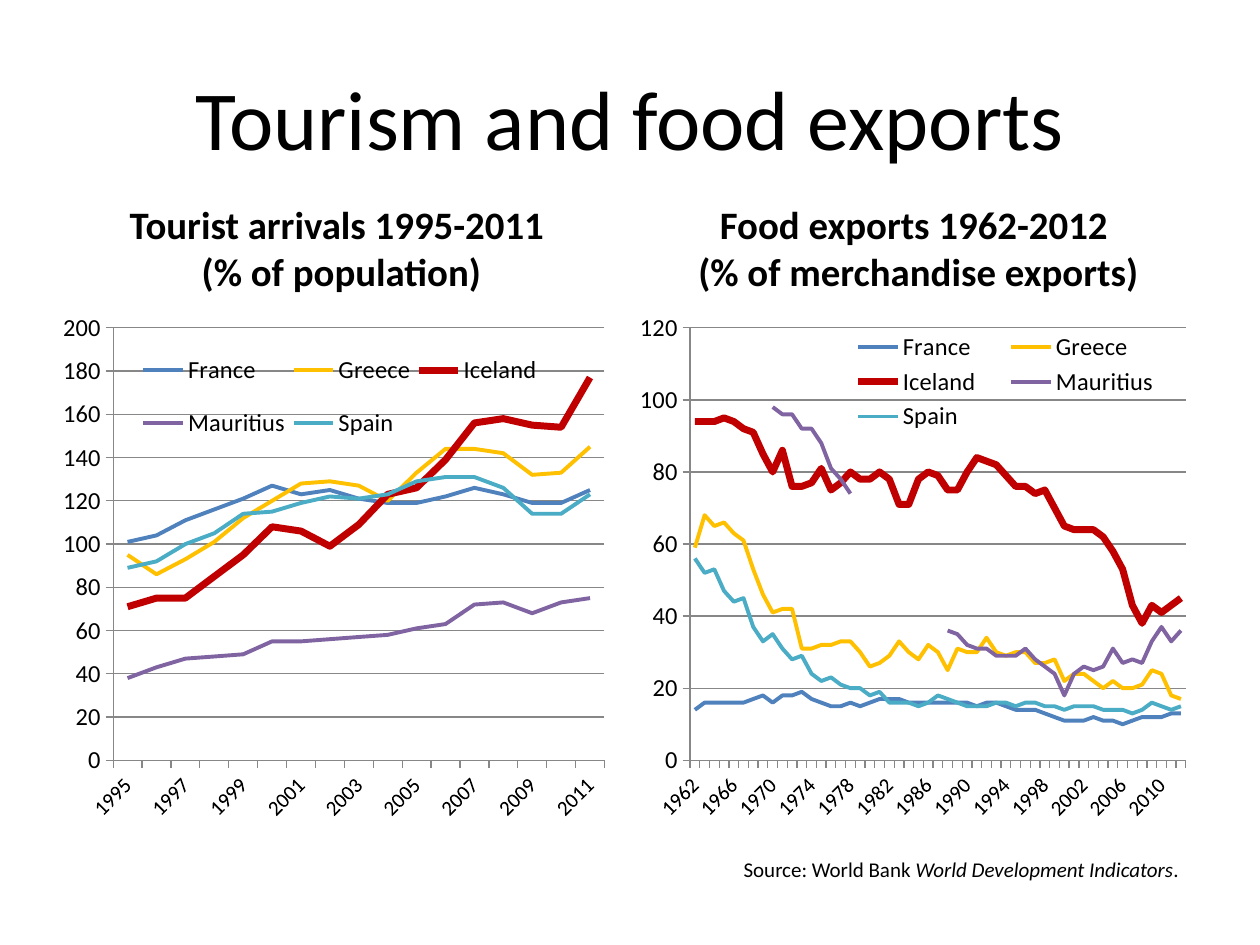
import pptx
import pptx.chart.data
import pptx.dml.color
import pptx.enum.chart
import pptx.enum.text
import pptx.oxml
import pptx.oxml.ns
import pptx.util
from pptx.util import Cm

FONT = "Calibri"
COLORS = {
    "text": "000000",
    "grid": "878787",
    "France": "4F81BD",
    "Greece": "FFC000",
    "Iceland": "C00000",
    "Mauritius": "8064A2",
    "Spain": "4BACC6",
}
HIGHLIGHT = "Iceland"

ARRIVALS = {
    "France": [101, 104, 111, 116, 121, 127, 123, 125, 121, 119, 119, 122, 126, 123, 119, 119, 125],
    "Greece": [95, 86, 93, 101, 112, 120, 128, 129, 127, 120, 133, 144, 144, 142, 132, 133, 145],
    "Iceland": [71, 75, 75, 85, 95, 108, 106, 99, 109, 123, 126, 139, 156, 158, 155, 154, 177],
    "Mauritius": [38, 43, 47, 48, 49, 55, 55, 56, 57, 58, 61, 63, 72, 73, 68, 73, 75],
    "Spain": [89, 92, 100, 105, 114, 115, 119, 122, 121, 123, 129, 131, 131, 126, 114, 114, 123],
}
FOOD_EXPORTS = {
    "France": [14, 16, 16, 16, 16, 16, 17, 18, 16, 18, 18, 19, 17, 16, 15, 15, 16,
               15, 16, 17, 17, 17, 16, 16, 16, 16, 16, 16, 16, 15, 16, 16, 15, 14,
               14, 14, 13, 12, 11, 11, 11, 12, 11, 11, 10, 11, 12, 12, 12, 13, 13],
    "Greece": [59, 68, 65, 66, 63, 61, 53, 46, 41, 42, 42, 31, 31, 32, 32, 33, 33,
               30, 26, 27, 29, 33, 30, 28, 32, 30, 25, 31, 30, 30, 34, 30, 29, 30,
               30, 27, 27, 28, 22, 24, 24, 22, 20, 22, 20, 20, 21, 25, 24, 18, 17],
    "Iceland": [94, 94, 94, 95, 94, 92, 91, 85, 80, 86, 76, 76, 77, 81, 75, 77, 80,
                78, 78, 80, 78, 71, 71, 78, 80, 79, 75, 75, 80, 84, 83, 82, 79, 76,
                76, 74, 75, 70, 65, 64, 64, 64, 62, 58, 53, 43, 38, 43, 41, 43, 45],
    "Mauritius": [None] * 8 + [98, 96, 96, 92, 92, 88, 81, 78, 74] + [None] * 9
                 + [36, 35, 32, 31, 31, 29, 29, 29, 31, 28, 26, 24, 18,
                    24, 26, 25, 26, 31, 27, 28, 27, 33, 37, 33, 36],
    "Spain": [56, 52, 53, 47, 44, 45, 37, 33, 35, 31, 28, 29, 24, 22, 23, 21, 20,
              20, 18, 19, 16, 16, 16, 15, 16, 18, 17, 16, 15, 15, 15, 16, 16, 15,
              16, 16, 15, 15, 14, 15, 15, 15, 14, 14, 14, 13, 14, 16, 15, 14, 15],
}


def rgb(name):
    """Return the named colour."""
    return pptx.dml.color.RGBColor.from_string(COLORS[name])


def style_font(font, size, bold=False, italic=False):
    """Give a font the slide's typeface and colour."""
    font.name, font.size = FONT, pptx.util.Pt(size)
    font.bold, font.italic = bold, italic
    font.color.rgb = rgb("text")


def add_heading(slide, box, wording, size, anchor, bold=False):
    """Place centred text in the given box."""
    frame = slide.shapes.add_textbox(*box).text_frame
    frame.word_wrap = True
    frame.vertical_anchor = anchor
    frame.text = wording
    paragraph = frame.paragraphs[0]
    paragraph.alignment = pptx.enum.text.PP_ALIGN.CENTER
    for run in paragraph.runs:
        style_font(run.font, size, bold)


def add_source(slide, box):
    """Place the source line with its publication in italics."""
    frame = slide.shapes.add_textbox(*box).text_frame
    frame.word_wrap = False
    for wording, italic in (("Source: World Bank ", False),
                            ("World Development Indicators", True), (".", False)):
        run = frame.paragraphs[0].add_run()
        run.text = wording
        style_font(run.font, 12, italic=italic)


def set_layout(part, position, percentages, inner=False):
    """Fix a chart part at percentages of the chart's size."""
    for automatic in part.xpath("c:layout"):
        part.remove(automatic)
    target = '<c:layoutTarget val="inner"/>' if inner else ""
    modes = '<c:xMode val="edge"/><c:yMode val="edge"/>'
    sizes = "".join(f'<c:{key} val="{value / 100:.3f}"/>'
                    for key, value in zip("xywh", percentages))
    part.insert(position, pptx.oxml.parse_xml(
        f'<c:layout {pptx.oxml.ns.nsdecls("c")}><c:manualLayout>'
        f'{target}{modes}{sizes}</c:manualLayout></c:layout>'))


def style_axes(chart, label_step, top, value_step):
    """Format the slanted years and the value scale."""
    years, values = chart.category_axis, chart.value_axis
    values.minimum_scale, values.maximum_scale, values.major_unit = 0, top, value_step
    for axis, size in ((years, 12), (values, 14)):
        axis.major_tick_mark = pptx.enum.chart.XL_TICK_MARK.OUTSIDE
        style_font(axis.tick_labels.font, size)
        axis.format.line.color.rgb = rgb("grid")
    years.has_major_gridlines = False
    values.has_major_gridlines = True
    values.major_gridlines.format.line.color.rgb = rgb("grid")
    chart.element.xpath(".//c:catAx/c:txPr/a:bodyPr")[0].set("rot", "-2700000")
    multi_level = chart.element.xpath(".//c:catAx/c:noMultiLvlLbl")[0]
    for tag, step in (("tickLblSkip", label_step), ("tickMarkSkip", 1)):
        multi_level.addprevious(pptx.oxml.parse_xml(
            f'<c:{tag} {pptx.oxml.ns.nsdecls("c")} val="{step}"/>'))


def add_trend_chart(slide, box, first_year, countries, label_step, top, plot, legend):
    """Place a line chart with one line per country."""
    chart_data = pptx.chart.data.CategoryChartData()
    year_count = len(countries["France"])
    chart_data.categories = [str(first_year + offset) for offset in range(year_count)]
    for country, shares in countries.items():
        chart_data.add_series(country, shares)
    chart = slide.shapes.add_chart(
        pptx.enum.chart.XL_CHART_TYPE.LINE, *box, chart_data).chart
    style_font(chart.font, 10)
    chart.has_title = False
    chart.plots[0].vary_by_categories = False
    for line in chart.plots[0].series:
        line.smooth = False
        line.marker.style = pptx.enum.chart.XL_MARKER_STYLE.NONE
        line.format.line.color.rgb = rgb(line.name)
        line.format.line.width = pptx.util.Pt(4 if line.name == HIGHLIGHT else 2.25)
    style_axes(chart, label_step, top, 20)
    chart.has_legend = True
    chart.legend.position = pptx.enum.chart.XL_LEGEND_POSITION.RIGHT
    chart.legend.include_in_layout = False
    style_font(chart.legend.font, 14)
    set_layout(chart.element.xpath(".//c:plotArea")[0], 0, plot, inner=True)
    set_layout(chart.element.xpath(".//c:legend")[0], 1, legend)


def add_panel(slide, box, heading, **trend):
    """Place a heading with its chart below it."""
    left, top, width, height = box
    heading_height = Cm(1.78)
    add_heading(slide, (left, top, width, heading_height), heading, 22.2,
                pptx.enum.text.MSO_ANCHOR.BOTTOM, bold=True)
    add_trend_chart(slide, (left, top + heading_height, width, height - heading_height), **trend)


def main():
    """Build and save the slide."""
    deck = pptx.Presentation()
    deck.slide_width, deck.slide_height = Cm(25.4), Cm(19.05)
    slide = deck.slides.add_slide(deck.slide_layouts[6])
    margin, panel_top, panel_width, panel_height = Cm(1.27), Cm(4.27), Cm(11.23), Cm(12.75)
    add_heading(slide, (margin, Cm(0.76), deck.slide_width - 2 * margin, Cm(3.18)),
                "Tourism and food exports", 48, pptx.enum.text.MSO_ANCHOR.MIDDLE)
    add_panel(slide, (margin, panel_top, panel_width, panel_height),
              "Tourist arrivals 1995-2011 \v(% of population)",
              first_year=1995, countries=ARRIVALS, label_step=2, top=200,
              plot=(8.6, 5.1, 88.6, 79.5), legend=(12.5, 6, 74, 23.5))
    add_panel(slide, (deck.slide_width - margin - panel_width, panel_top, panel_width, panel_height),
              "Food exports 1962-2012 \v(% of merchandise exports)",
              first_year=1962, countries=FOOD_EXPORTS, label_step=4, top=120,
              plot=(8.6, 5.1, 89.4, 79.5), legend=(34, 5, 63, 20))
    add_source(slide, (Cm(14.74), Cm(17.15), Cm(9.35), Cm(0.77)))
    deck.save("out.pptx")


if __name__ == "__main__":
    main()
